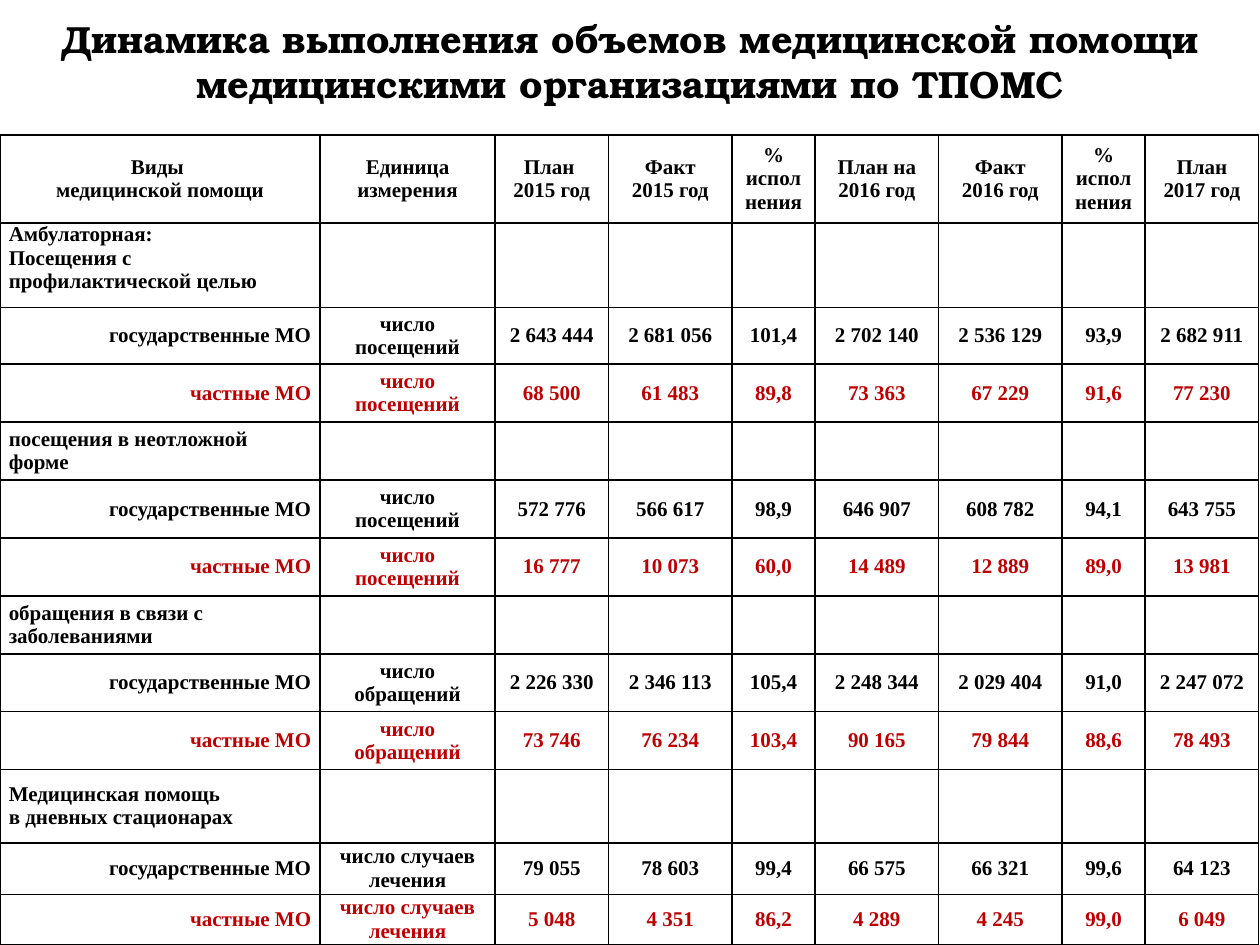
from lxml import etree
from pptx import Presentation
from pptx.dml.color import RGBColor
from pptx.enum.text import MSO_ANCHOR as Anchor, PP_ALIGN as Align
from pptx.oxml.ns import qn
from pptx.util import Inches, Pt

BLACK = RGBColor(0x00, 0x00, 0x00)
RED = RGBColor(0xC0, 0x00, 0x00)
TITLE_FONT = "TeX Gyre Bonum"
TABLE_FONT = "Times New Roman"

TITLE = "Динамика выполнения объемов медицинской помощи медицинскими организациями по ТПОМС"
COLUMN_WIDTHS = [2.54, 1.39, 0.9, 0.98, 0.66, 0.98, 0.98, 0.66, 0.9]
ROW_HEIGHTS = [0.7, 0.67, 0.45] + [0.46] * 7 + [0.58, 0.41, 0.4]
HEADERS = [
    "Виды \nмедицинской помощи", "Единица измерения", "План \n2015 год",
    "Факт\n2015 год", "% исполнения", "План на 2016 год",
    "Факт\n2016 год", "% исполнения", "План 2017 год",
]
OWNERS = [("государственные МО", BLACK), ("частные МО", RED)]
CARE_TYPES = [
    ("Амбулаторная:\nПосещения с профилактической целью", "число\nпосещений", [
        ["2 643 444", "2 681 056", "101,4", "2 702 140", "2 536 129", "93,9", "2 682 911"],
        ["68 500", "61 483", "89,8", "73 363", "67 229", "91,6", "77 230"],
    ]),
    ("посещения в неотложной форме", "число\nпосещений", [
        ["572 776", "566 617", "98,9", "646 907", "608 782", "94,1", "643 755"],
        ["16 777", "10 073", "60,0", "14 489", "12 889", "89,0", "13 981"],
    ]),
    ("обращения в связи с заболеваниями", "число\nобращений", [
        ["2 226 330", "2 346 113", "105,4", "2 248 344", "2 029 404", "91,0", "2 247 072"],
        ["73 746", "76 234", "103,4", "90 165", "79 844", "88,6", "78 493"],
    ]),
    ("Медицинская помощь\nв дневных стационарах", "число случаев лечения", [
        ["79 055", "78 603", "99,4", "66 575", "66 321", "99,6", "64 123"],
        ["5 048", "4 351", "86,2", "4 289", "4 245", "99,0", "6 049"],
    ]),
]


def format_text(text_frame, font_name, size, color, align):
    """Give every paragraph one alignment and every run one bold font."""
    for paragraph in text_frame.paragraphs:
        paragraph.alignment = align
        for run in paragraph.runs:
            run.font.name = font_name
            run.font.size = Pt(size)
            run.font.bold = True
            run.font.color.rgb = color


def add_borders(cell):
    """Draw a thin black line on all four sides of a cell."""
    properties = cell._tc.get_or_add_tcPr()
    for position, side in enumerate(("a:lnL", "a:lnR", "a:lnT", "a:lnB")):
        line = etree.Element(qn(side), w=str(Pt(1)))
        fill = etree.SubElement(line, qn("a:solidFill"))
        etree.SubElement(fill, qn("a:srgbClr"), val=str(BLACK))
        properties.insert(position, line)


def fill_cell(cell, text, color, align, side_margin):
    """Write and style one table cell."""
    cell.fill.background()
    add_borders(cell)
    cell.margin_left = cell.margin_right = Inches(side_margin)
    cell.margin_top = cell.margin_bottom = 0
    cell.vertical_anchor = Anchor.MIDDLE
    cell.text_frame.text = text
    format_text(cell.text_frame, TABLE_FONT, 12, color, align)


def table_rows():
    """List each row as its texts, colour and first column alignment."""
    rows = [(HEADERS, BLACK, Align.CENTER)]
    for care_type, unit, volumes in CARE_TYPES:
        rows.append(([care_type] + [""] * 8, BLACK, Align.LEFT))
        for (owner, color), values in zip(OWNERS, volumes):
            rows.append(([owner, unit] + values, color, Align.RIGHT))
    return rows


def add_title(slide, left, top, width, height):
    """Place the centred slide title in the given box."""
    title = slide.shapes.add_textbox(left, top, width, height).text_frame
    title.word_wrap = True
    title.vertical_anchor = Anchor.MIDDLE
    title.text = TITLE
    format_text(title, TITLE_FONT, 21.6, BLACK, Align.CENTER)


def add_volume_table(slide, left, top, width, height):
    """Place the table of planned and actual care volumes in the given box."""
    rows = table_rows()
    table = slide.shapes.add_table(len(rows), len(HEADERS), left, top, width, height).table
    table.first_row = table.horz_banding = False
    for column, column_width in zip(table.columns, COLUMN_WIDTHS):
        column.width = Inches(column_width)
    for row, row_height in zip(table.rows, ROW_HEIGHTS):
        row.height = Inches(row_height)
    last_column = len(HEADERS) - 1
    for row_index, (texts, color, first_align) in enumerate(rows):
        for column_index, text in enumerate(texts):
            align = Align.CENTER if column_index else first_align
            side_margin = 0 if row_index and column_index == last_column else 0.07
            fill_cell(table.cell(row_index, column_index), text, color, align, side_margin)
    table.cell(1, 0).vertical_anchor = Anchor.TOP


def main():
    """Build the slide and save it."""
    presentation = Presentation()
    presentation.slide_width = Inches(10)
    presentation.slide_height = Inches(7.5)
    slide = presentation.slides.add_slide(presentation.slide_layouts[6])
    add_volume_table(slide, Inches(0), Inches(1.07), Inches(10), Inches(6.43))
    add_title(slide, Inches(0), Inches(0.05), Inches(10), Inches(0.87))
    presentation.save("out.pptx")


if __name__ == "__main__":
    main()
